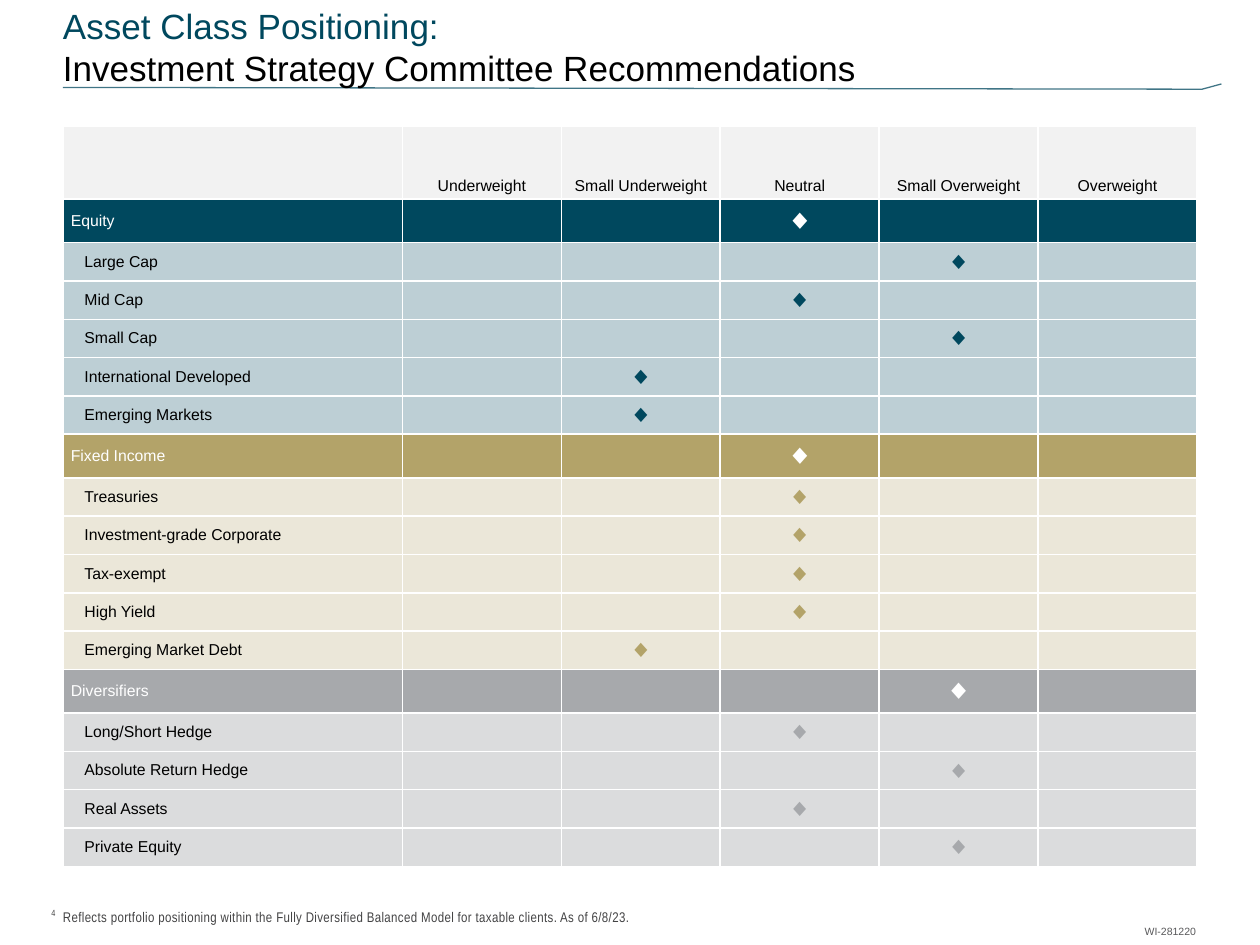
from lxml import etree
from pptx import Presentation
from pptx.dml.color import RGBColor
from pptx.enum.text import MSO_ANCHOR, MSO_AUTO_SIZE, PP_ALIGN
from pptx.oxml.ns import qn
from pptx.util import Pt

LEFT, CENTER, RIGHT = PP_ALIGN.LEFT, PP_ALIGN.CENTER, PP_ALIGN.RIGHT
BOTTOM, MIDDLE, TOP = MSO_ANCHOR.BOTTOM, MSO_ANCHOR.MIDDLE, MSO_ANCHOR.TOP
FIT = MSO_AUTO_SIZE.SHAPE_TO_FIT_TEXT

COLORS = {
    "teal": "00485E", "gold": "B3A369", "gray": "A7A9AC", "head": "F2F2F2",
    "white": "FFFFFF", "black": "000000", "note": "434344", "code": "59595B",
}
RATINGS = ["Underweight", "Small Underweight", "Neutral", "Small Overweight", "Overweight"]
# Each group: name, rating column, colour, tint in percent, assets with rating column
GROUPS = [
    ("Equity", 3, "teal", 26, [
        ("Large Cap", 4), ("Mid Cap", 3), ("Small Cap", 4),
        ("International Developed", 2), ("Emerging Markets", 2)]),
    ("Fixed Income", 3, "gold", 25, [
        ("Treasuries", 3), ("Investment-grade Corporate", 3), ("Tax-exempt", 3),
        ("High Yield", 3), ("Emerging Market Debt", 2)]),
    ("Diversifiers", 4, "gray", 40, [
        ("Long/Short Hedge", 3), ("Absolute Return Hedge", 4),
        ("Real Assets", 3), ("Private Equity", 4)]),
]
NOTE = ("Reflects portfolio positioning within the Fully Diversified Balanced Model "
        "for taxable clients. As of 6/8/23.")
HEAD_H, GROUP_H, ASSET_H = 41.75, 25, 21.9
NAME_W, RATE_W = 194, 90.8


def rgb(name):
    return RGBColor.from_string(COLORS[name])


def style(para, size, color, align=LEFT, face="Arial"):
    para.alignment = align
    para.font.size = Pt(size)
    para.font.name = face
    para.font.color.rgb = rgb(color)


def fade(parent, percent):
    """Set the opacity of the first colour found under parent."""
    color = next(parent.iter(qn("a:srgbClr")))
    etree.SubElement(color, qn("a:alpha"), val=str(percent * 1000))


def add_text(slide, box, text, size, color, align=LEFT, face="Arial", anchor=BOTTOM, inset=0):
    frame = slide.shapes.add_textbox(*map(Pt, box)).text_frame
    frame.word_wrap = True
    frame.vertical_anchor = anchor
    frame.margin_left = frame.margin_right = Pt(inset)
    frame.margin_top = frame.margin_bottom = Pt(inset / 2)
    para = frame.paragraphs[0]
    para.text = text
    style(para, size, color, align, face)
    return frame


def add_rule(slide):
    pen = slide.shapes.build_freeform(36, 50.5, scale=Pt(1))
    pen.add_line_segments([(686.75, 51), (698.4, 47.5)], close=False)
    rule = pen.convert_to_shape()
    rule.shadow.inherit = False
    rule.fill.background()
    rule.line.color.rgb = rgb("teal")
    rule.line.width = Pt(0.75)
    fade(rule.line._ln, 75)


def add_edges(cell):
    props = cell._tc.get_or_add_tcPr()
    for side in ("lnL", "lnR", "lnT", "lnB"):
        line = etree.SubElement(props, qn("a:" + side), w=str(Pt(1)))
        fill = etree.SubElement(line, qn("a:solidFill"))
        etree.SubElement(fill, qn("a:srgbClr"), val=COLORS["white"])


def fill_cell(cell, text, size, ink, fill, align=CENTER, tint=100, anchor=MIDDLE,
              left=4.5, right=4.5, pad=0):
    add_edges(cell)
    cell.fill.solid()
    cell.fill.fore_color.rgb = rgb(fill)
    if tint < 100:
        fade(cell._tc.tcPr.find(qn("a:solidFill")), tint)
    cell.margin_left, cell.margin_right = Pt(left), Pt(right)
    cell.margin_top = cell.margin_bottom = Pt(pad)
    cell.vertical_anchor = anchor
    para = cell.text_frame.paragraphs[0]
    if text:
        para.text = text
    style(para, size, ink, align)


def fill_row(row, height, name, spot, fill, ink, mark, size, left, tint=100):
    """Fill one row: its name, then a diamond in the column numbered spot."""
    row.height = Pt(height)
    for col, cell in enumerate(row.cells):
        if col == 0:
            fill_cell(cell, name, 9, ink, fill, LEFT, tint, left=left)
        else:
            fill_cell(cell, "◆" if col == spot else "", size, mark, fill, tint=tint)


def add_grid(slide):
    count = 1 + sum(1 + len(group[-1]) for group in GROUPS)
    height = HEAD_H + len(GROUPS) * GROUP_H + (count - 1 - len(GROUPS)) * ASSET_H
    table = slide.shapes.add_table(count, 6, Pt(36), Pt(72), Pt(648), Pt(height)).table
    table.first_row = table.horz_banding = False
    for col, column in enumerate(table.columns):
        column.width = Pt(RATE_W if col else NAME_W)

    rows = iter(table.rows)
    head = next(rows)
    head.height = Pt(HEAD_H)
    for cell, label in zip(head.cells, [""] + RATINGS):
        fill_cell(cell, label, 9, "black", "head", anchor=BOTTOM, left=0, right=0, pad=2.25)
    for name, spot, color, tint, assets in GROUPS:
        fill_row(next(rows), GROUP_H, name, spot, color, "white", "white", 16, 4.5)
        for asset, place in assets:
            fill_row(next(rows), ASSET_H, asset, place, color, "black", color, 14, 12.25, tint)


def main():
    deck = Presentation()
    deck.slide_width, deck.slide_height = Pt(720), Pt(540)
    slide = deck.slides.add_slide(deck.slide_layouts[6])
    add_rule(slide)
    add_text(slide, (0, 511.2, 31.7, 13.7), "4", 5.1, "note", RIGHT, "Arial Narrow")
    code = add_text(slide, (594.7, 524.9, 95.8, 14.4), "WI-281220", 6, "code", RIGHT,
                    anchor=TOP, inset=7.2)
    code.auto_size = FIT
    title = add_text(slide, (36, 0, 648, 50.4),
                     "Asset Class Positioning:\vInvestment Strategy Committee Recommendations",
                     20, "black")
    title.paragraphs[0].runs[0].font.color.rgb = rgb("teal")
    note = add_text(slide, (36, 515.5, 482.4, 13), NOTE, 8, "note", face="Arial Narrow")
    note.paragraphs[0].runs[0]._r.get_or_add_rPr().set("spc", "20")
    add_grid(slide)
    deck.save("out.pptx")


if __name__ == "__main__":
    main()
